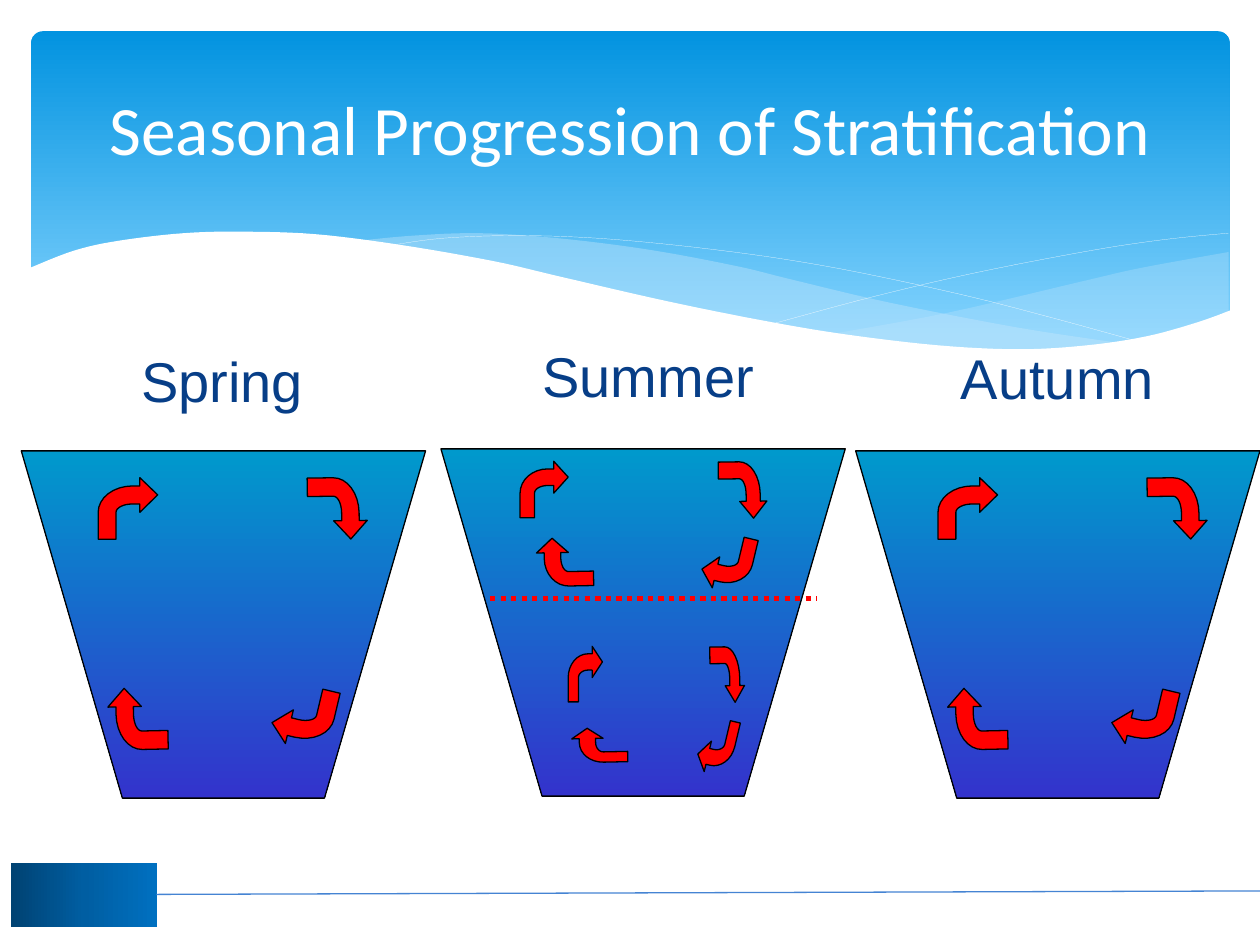
import math
import pptx
import pptx.util
import pptx.dml.color
import pptx.enum.dml
import pptx.enum.shapes
import pptx.enum.text
import pptx.oxml.ns
from lxml import etree

Cm, Pt = pptx.util.Cm, pptx.util.Pt
Kind = pptx.enum.shapes.MSO_SHAPE
Anchor = pptx.enum.text.MSO_ANCHOR
qn = pptx.oxml.ns.qn

# All lengths are in centimetres.
TITLE = "Seasonal Progression of Stratification"
# Season, label corner, tank corner
TANKS = [
    ("Spring", (1.09, 6.86), (0.43, 9.09)),
    ("Summer", (9.68, 6.76), (8.89, 9.05)),
    ("Autumn", (17.93, 6.81), (17.25, 9.09)),
]
TANK_W, TANK_H = 8.15, 7
WATER = [(0, "0099CC"), (100, "3333CC")]

# Arrow size, arrows with width and height swapped, centres of the four arrows
MIXED = [(2.58, 10.25), (6.8, 10.25), (2.78, 14.49), (6.13, 14.44)]
SWIRLS = [
    ((1.2, 1.24), (1, 2), MIXED),
    ((0.97, 1.14), (1,),
     [(10.97, 9.87), (14.97, 9.88), (11.39, 11.33), (14.68, 11.34)]),
    ((0.69, 1.12), (1,),
     [(11.8, 13.59), (14.66, 13.6), (12.09, 15.02), (14.46, 15.04)]),
    ((1.2, 1.24), (1, 2), [(x + 16.93, y) for x, y in MIXED]),
]
TURNS = [0, 89.2, 268.8, 193.4]

# Each wave is made of smooth arcs that meet at corners: fill, opacity, arcs
WAVES = [
    ("C6E7FC", 29, [
        [(24.77, 5.08), (23.01, 5.4), (21.87, 5.66), (19.13, 6.3), (16.79, 6.73)],
        [(16.79, 6.73), (18.26, 6.91), (19.83, 7.04), (21.21, 7.04),
         (22.58, 6.91), (23.75, 6.65), (24.77, 6.27)]]),
    ("C6E7FC", 40, [
        [(7.26, 4.85), (8.33, 4.75), (9.65, 4.7), (11.23, 4.8), (13.06, 5.03),
         (14.83, 5.36), (15.98, 5.64), (17.93, 6.1), (20.5, 6.6), (22.68, 6.93)],
        [(22.68, 6.93), (21.54, 7.04), (19.94, 7.06), (18.34, 6.95), (16.51, 6.71),
         (14.38, 6.3), (11.4, 5.64), (9.73, 5.26), (8.2, 4.98), (7.26, 4.85)]]),
    (None, 100, [
        [(7.85, 4.95), (8.97, 4.8), (10.57, 4.75), (12.42, 4.83), (14.78, 5.08),
         (16.89, 5.41), (19.3, 5.92), (21.11, 6.38), (23.04, 6.91)]]),
    (None, 100, [
        [(15.57, 6.53), (17.65, 5.97), (19.71, 5.49), (22, 5.05), (23.47, 4.83),
         (24.77, 4.7)]]),
    ("FFFFFF", 100, [
        [(0.58, 5.41), (1.5, 5.05), (2.41, 4.85), (3.71, 4.7), (4.9, 4.67),
         (6.35, 4.72), (8.03, 4.93), (9.93, 5.26), (11.35, 5.59), (13.44, 6.07),
         (15.32, 6.45), (16.97, 6.73), (18.9, 6.96), (20.55, 7.04), (21.92, 6.96),
         (23.11, 6.78), (24.13, 6.5), (24.82, 6.25)],
        [(24.82, 8.36), (0.58, 8.36)]]),
]

deck = pptx.Presentation()
deck.slide_width, deck.slide_height = Cm(25.4), Cm(19.05)
slide = deck.slides.add_slide(deck.slide_layouts[6])
shapes = slide.shapes


def rgb(code):
    return pptx.dml.color.RGBColor.from_string(code)


def paint(shape, fill=None, line=None, width=0.75):
    shape.shadow.inherit = False
    if fill:
        shape.fill.solid()
        shape.fill.fore_color.rgb = rgb(fill)
    else:
        shape.fill.background()
    if line:
        shape.line.color.rgb = rgb(line)
        shape.line.width = Pt(width)
    else:
        shape.line.fill.background()


def blend(shape, stops, angle):
    """Fill with a gradient; the angle runs anticlockwise."""
    shape.fill.gradient()
    shape.fill.gradient_angle = angle
    group = shape._element.spPr.find(".//" + qn("a:gsLst"))
    for stop in list(group):
        group.remove(stop)
    for pos, code in stops:
        stop = etree.SubElement(group, qn("a:gs"), pos=str(pos * 1000))
        etree.SubElement(stop, qn("a:srgbClr"), val=code)


def smooth(pts, steps=6):
    """Return points on a Catmull-Rom curve through pts."""
    ends = [pts[0], *pts, pts[-1]]
    out = [pts[0]]
    for a, b, c, d in zip(ends, ends[1:], ends[2:], ends[3:]):
        for i in range(1, steps + 1):
            t = i / steps
            out.append(tuple(
                (2 * q + (r - p) * t + (2 * p - 5 * q + 4 * r - s) * t ** 2
                 + (3 * q - p - 3 * r + s) * t ** 3) / 2
                for p, q, r, s in zip(a, b, c, d)))
    return out


def trace(pts, close=True):
    pts = [(x * 1000, y * 1000) for x, y in pts]
    pen = shapes.build_freeform(*pts[0], scale=360)
    pen.add_line_segments(pts[1:], close=close)
    return pen.convert_to_shape()


def bend(rx, ry):
    """Quarter arc of the arrow shaft, from its side to its top."""
    turns = [math.pi / 2 * i / 8 for i in range(9)]
    return [(0.575 - rx * math.cos(t), 0.563 - ry * math.sin(t)) for t in turns]


# Bent arrow on a unit square
ARROW = [(1, 0.28), (0.7, 0), (0.7, 0.135), *reversed(bend(0.575, 0.428)),
         (0, 1), (0.3, 1), *bend(0.275, 0.135), (0.7, 0.428), (0.7, 0.563)]


def write(shape, text, size, face, code, anchor=Anchor.TOP):
    frame = shape.text_frame
    frame.word_wrap = True
    frame.vertical_anchor = anchor
    para = frame.paragraphs[0]
    para.text = text
    para.alignment = pptx.enum.text.PP_ALIGN.CENTER
    para.font.size, para.font.name = Pt(size), face
    para.font.color.rgb = rgb(code)


def box(x, y, w, h):
    return shapes.add_textbox(Cm(x), Cm(y), Cm(w), Cm(h))


def rule(x1, y1, x2, y2, code, width):
    line = shapes.add_connector(pptx.enum.shapes.MSO_CONNECTOR.STRAIGHT,
                                Cm(x1), Cm(y1), Cm(x2), Cm(y2))
    line.line.color.rgb = rgb(code)
    line.line.width = Pt(width)
    etree.SubElement(line._element.spPr, qn("a:effectLst"))
    return line


# Banner
sky = shapes.add_shape(Kind.ROUNDED_RECTANGLE, Cm(0.63), Cm(0.63), Cm(24.16), Cm(6.86))
sky.adjustments[0] = 0.034
paint(sky)
blend(sky, [(0, "0293E0"), (90, "83D3FE")], 270)
for fill, alpha, arcs in WAVES:
    pts = [p for arc in arcs for p in (smooth(arc) if len(arc) > 2 else arc)]
    wave = trace(pts, close=bool(fill))
    paint(wave, fill, None if fill else "FFFFFF", 0.12)
    if alpha < 100:
        tint = wave._element.spPr.find(".//" + qn("a:srgbClr"))
        etree.SubElement(tint, qn("a:alpha"), val=str(alpha * 1000))

# Footer
badge = shapes.add_shape(Kind.RECTANGLE, Cm(0.22), Cm(17.4), Cm(2.95), Cm(1.28))
paint(badge)
blend(badge, [(0, "004272"), (50, "005EA2"), (100, "0070C0")], 0)
rule(3.15, 18.03, 25.4, 17.96, "4584D3", 0.75)

write(box(1.27, 0.84, 22.86, 3.48), TITLE, 39.6, "Calibri", "FFFFFF", Anchor.MIDDLE)

# Tanks
for name, spot, (x, y) in TANKS:
    tank = trace([(x, y), (x + TANK_W / 4, y + TANK_H),
                  (x + TANK_W * 3 / 4, y + TANK_H), (x + TANK_W, y)])
    paint(tank, line="000000")
    blend(tank, WATER, 270)
    write(box(*spot, 6.78, 1.6), name, 32, "Arial", "073E87")

for (w, h), swaps, spots in SWIRLS:
    for i, ((x, y), turn) in enumerate(zip(spots, TURNS)):
        wide, high = (h, w) if i in swaps else (w, h)
        arrow = trace([(x + (u - 0.5) * wide, y + (v - 0.5) * high) for u, v in ARROW])
        arrow.rotation = turn
        paint(arrow, "FF0000", "000000")

layer = rule(9.88, 12.07, 16.46, 12.07, "FF0000", 3)
layer.line.dash_style = pptx.enum.dml.MSO_LINE.ROUND_DOT

deck.save("out.pptx")
